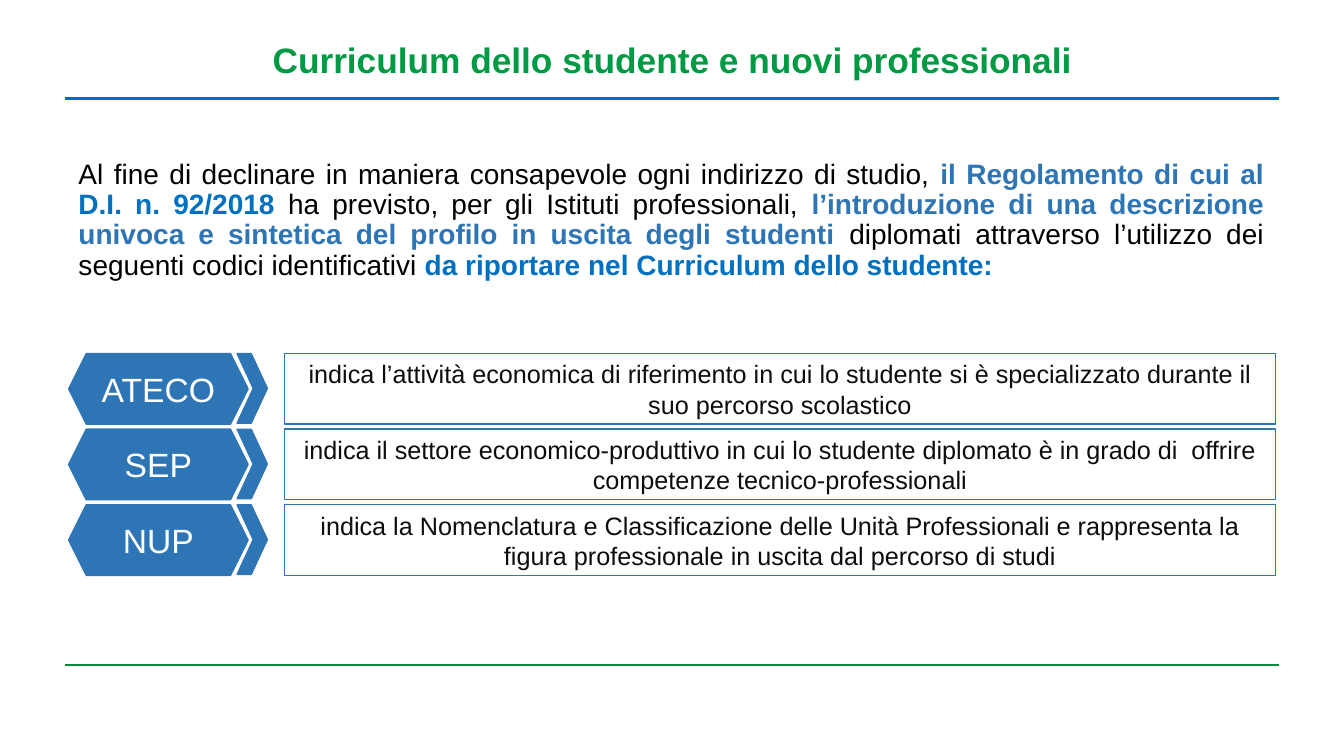
from lxml import etree
from pptx import Presentation
from pptx.dml.color import RGBColor
from pptx.enum import shapes as kinds, text as enums
from pptx.oxml import ns
from pptx.util import Pt

HUES = {
    "title": "009A44", "top": "0068CF", "foot": "09893C", "body": "000000",
    "steel": "2E75B6", "blue": "0070C0", "white": "FFFFFF", "ink": "0D0D0D",
}
FORM = kinds.MSO_SHAPE
ALIGN = enums.PP_ALIGN
MID = enums.MSO_ANCHOR.MIDDLE

INTRO = [
    ("Al fine di declinare in maniera consapevole ogni indirizzo di studio, ", "body"),
    ("il Regolamento di cui al ", "steel"),
    ("D.I. n. 92/2018 ", "blue"),
    ("ha previsto, per gli Istituti professionali, ", "body"),
    ("l’introduzione di una descrizione univoca e sintetica del profilo in uscita "
     "degli studenti ", "steel"),
    ("diplomati attraverso l’utilizzo dei seguenti codici identificativi", "body"),
    (" da riportare nel Curriculum dello studente:", "blue"),
]
CODES = [
    ("ATECO", "indica l’attività economica di riferimento in cui lo studente si è "
     "specializzato durante il suo percorso scolastico"),
    ("SEP", "indica il settore economico-produttivo in cui lo studente diplomato è in "
     "grado di  offrire competenze tecnico-professionali"),
    ("NUP", "indica la Nomenclatura e Classificazione delle Unità Professionali e "
     "rappresenta la figura professionale in uscita dal percorso di studi"),
]


def color(name):
    return RGBColor.from_string(HUES[name])


def style(font, size, hue, bold=False):
    font.name, font.size, font.bold = "Arial", Pt(size), bold
    font.color.rgb = color(hue)


def label(shape, words, size, hue, bold=False):
    """Put one centred paragraph in the middle of a shape."""
    frame = shape.text_frame
    frame.word_wrap, frame.vertical_anchor = True, MID
    frame.text = words
    para = frame.paragraphs[0]
    para.alignment = ALIGN.CENTER
    style(para.runs[0].font, size, hue, bold)


def rule(slide, left, top, width, hue):
    line = slide.shapes.add_connector(
        kinds.MSO_CONNECTOR.STRAIGHT, Pt(left), Pt(top), Pt(left + width), Pt(top))
    line.line.color.rgb, line.line.width = color(hue), Pt(1.5)
    etree.SubElement(line._element.spPr, ns.qn("a:effectLst"))


def block(slide, form, left, top, width, height, filled=True):
    shape = slide.shapes.add_shape(form, Pt(left), Pt(top), Pt(width), Pt(height))
    shape.shadow.inherit = False
    if filled:
        shape.fill.solid()
        shape.fill.fore_color.rgb = color("steel")
    else:
        shape.fill.background()
    shape.line.color.rgb, shape.line.width = color("steel"), Pt(1)
    return shape


def title(slide, left, top, width, height):
    box = slide.shapes.add_textbox(Pt(left), Pt(top), Pt(width), Pt(height))
    label(box, "Curriculum dello studente e nuovi professionali", 25.2, "title", True)


def intro(slide, left, top, width, height):
    box = slide.shapes.add_textbox(Pt(left), Pt(top), Pt(width), Pt(height))
    box.text_frame.word_wrap = True
    para = box.text_frame.paragraphs[0]
    para.alignment, para.line_spacing, para.space_after = ALIGN.JUSTIFY, 0.9, Pt(4)
    for words, hue in INTRO:
        run = para.add_run()
        run.text = words
        style(run.font, 20, hue, hue != "body")


def code(slide, left, top, width, height, name, words):
    """Draw one row: hexagon with the code, chevron, framed meaning."""
    tag = block(slide, FORM.HEXAGON, left, top, 128.2, height)
    label(tag, name, 24, "white")
    frame = tag.text_frame
    frame.word_wrap = False
    frame.margin_left = frame.margin_right = 0
    arrow = block(slide, FORM.CHEVRON, left + 120.4, top, 21.6, height - 0.7)
    arrow.adjustments[0] = 0.534
    note = block(slide, FORM.RECTANGLE, left + 154.2, top, width - 154.2, height, False)
    label(note, words, 18, "ink")


def main():
    deck = Presentation()
    deck.slide_width, deck.slide_height = Pt(960), Pt(540)
    slide = deck.slides.add_slide(deck.slide_layouts[6])
    rule(slide, 46.4, 475.2, 867.2, "foot")
    rule(slide, 46.4, 70.4, 867.2, "top")
    title(slide, 157, 13.7, 646.6, 56.9)
    intro(slide, 49, 110.9, 861.1, 94.3)
    for row, (name, words) in enumerate(CODES):
        code(slide, 49, 252.6 + 54 * row, 862, 50.4, name, words)
    deck.save("out.pptx")


if __name__ == "__main__":
    main()
